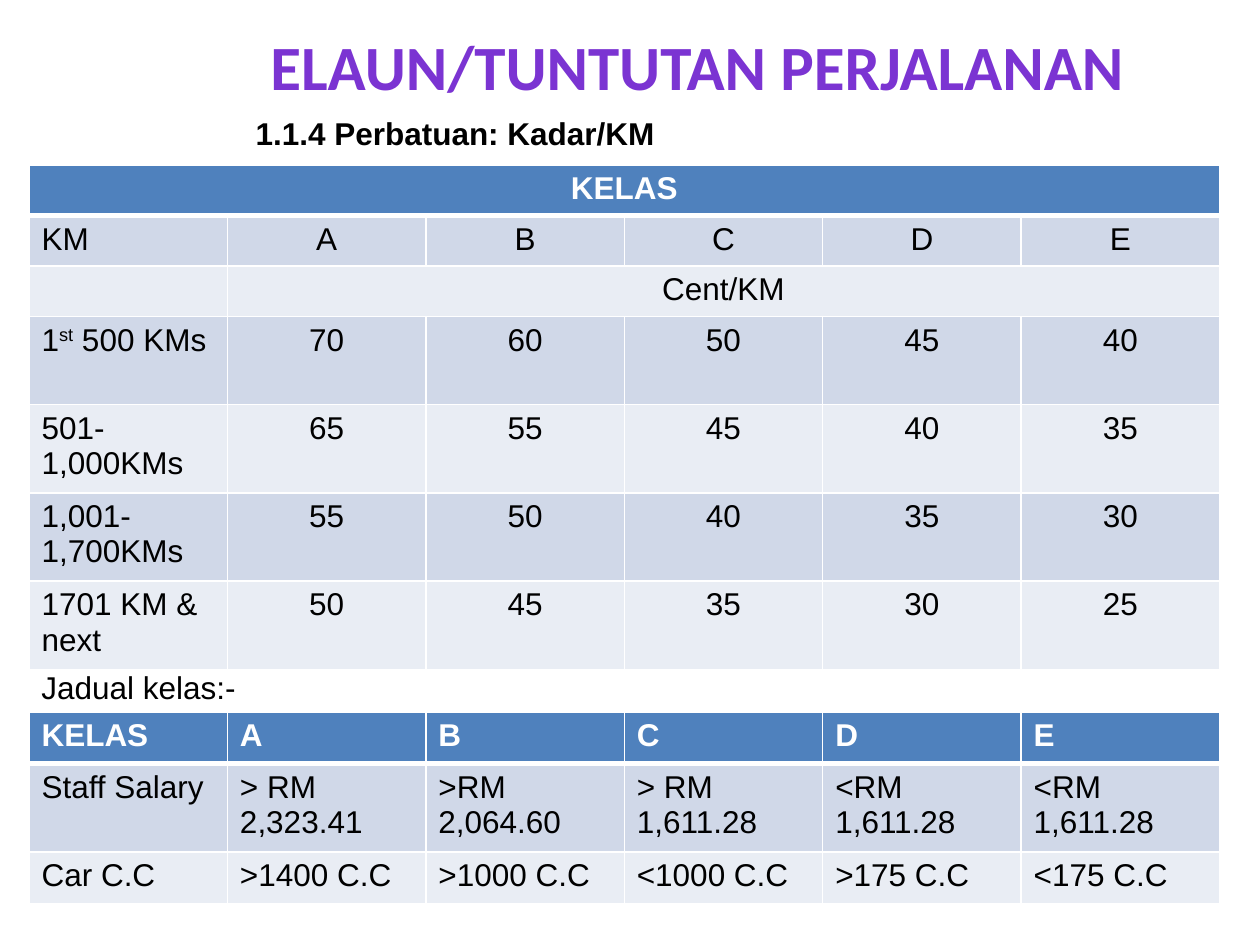
from dataclasses import dataclass

from lxml import etree
from pptx import Presentation
from pptx.dml.color import RGBColor
from pptx.enum.text import MSO_ANCHOR, MSO_AUTO_SIZE, PP_ALIGN
from pptx.oxml.ns import qn
from pptx.util import Inches, Pt

LEFT = PP_ALIGN.LEFT
CENTER = PP_ALIGN.CENTER
MIDDLE = MSO_ANCHOR.MIDDLE
TOP = MSO_ANCHOR.TOP
FIT_SHAPE = MSO_AUTO_SIZE.SHAPE_TO_FIT_TEXT


@dataclass(frozen=True)
class Theme:
    title_font: str = "Calibri"
    body_font: str = "Arial"
    title_size: int = 36
    body_size: int = 18
    title_color: str = "7B34D2"
    text_color: str = "000000"
    header_color: str = "4F81BD"
    odd_band: str = "D0D8E8"
    even_band: str = "E9EDF4"
    white: str = "FFFFFF"
    thin_line: int = 1
    thick_line: int = 3


def write_text(frame, text, *, font, size, color, bold=False, align=LEFT):
    paragraph = frame.paragraphs[0]
    paragraph.alignment = align
    for index, part in enumerate(text.split("^")):
        run = paragraph.add_run()
        run.text = part
        run.font.name = font
        run.font.size = Pt(size)
        run.font.bold = bold
        run.font.color.rgb = RGBColor.from_string(color)
        if index % 2:
            run.font._element.set("baseline", "30000")


def add_border(cell, side, width, color):
    line = etree.SubElement(cell._tc.get_or_add_tcPr(), qn(f"a:ln{side}"), w=str(Pt(width)))
    fill = etree.SubElement(line, qn("a:solidFill"))
    etree.SubElement(fill, qn("a:srgbClr"), val=color)


class SlideBuilder:
    def __init__(self, slide, theme):
        self.slide = slide
        self.theme = theme

    def title(self, text, left, top, width, height):
        shape = self.slide.shapes.title
        shape.left, shape.top = Inches(left), Inches(top)
        shape.width, shape.height = Inches(width), Inches(height)
        frame = shape.text_frame
        frame.word_wrap = False
        frame.auto_size = FIT_SHAPE
        frame.vertical_anchor = MIDDLE
        write_text(frame, text, font=self.theme.title_font, size=self.theme.title_size,
                   color=self.theme.title_color, bold=True, align=CENTER)

    def label(self, text, left, top, width, height, bold=False):
        shape = self.slide.shapes.add_textbox(
            Inches(left), Inches(top), Inches(width), Inches(height))
        frame = shape.text_frame
        frame.word_wrap = True
        frame.auto_size = FIT_SHAPE
        write_text(frame, text, font=self.theme.body_font, size=self.theme.body_size,
                   color=self.theme.text_color, bold=bold)

    def table(self, rows, left, top, width, row_heights, value_align=LEFT, merges=()):
        column_count = len(rows[0])
        table = self.slide.shapes.add_table(
            len(rows), column_count, Inches(left), Inches(top),
            Inches(width), Inches(sum(row_heights))).table
        for column in table.columns:
            column.width = Inches(width / column_count)
        for row_index, (values, height) in enumerate(zip(rows, row_heights)):
            table.rows[row_index].height = Inches(height)
            for column_index, value in enumerate(values):
                align = value_align if column_index or len(values[0]) and not any(values[1:]) else LEFT
                self.cell(table.cell(row_index, column_index), value, row_index, align)
        for row_index, first_column in merges:
            table.cell(row_index, first_column).merge(table.cell(row_index, column_count - 1))

    def cell(self, cell, text, row_index, align):
        theme = self.theme
        header = row_index == 0
        top_width = theme.thick_line if row_index == 1 else theme.thin_line
        bottom_width = theme.thick_line if header else theme.thin_line
        widths = {"L": theme.thin_line, "R": theme.thin_line, "T": top_width, "B": bottom_width}
        for side, width in widths.items():
            add_border(cell, side, width, theme.white)
        band = theme.odd_band if row_index % 2 else theme.even_band
        cell.fill.solid()
        cell.fill.fore_color.rgb = RGBColor.from_string(theme.header_color if header else band)
        cell.vertical_anchor = TOP
        if text:
            write_text(cell.text_frame, text, font=theme.body_font, size=theme.body_size,
                       color=theme.white if header else theme.text_color,
                       bold=header, align=align)


def main():
    presentation = Presentation()
    presentation.slide_width = Inches(10)
    presentation.slide_height = Inches(7.5)
    slide = presentation.slides.add_slide(presentation.slide_layouts[5])
    builder = SlideBuilder(slide, Theme())

    classes = ["A", "B", "C", "D", "E"]
    rates = [
        ["KELAS", "", "", "", "", ""],
        ["KM", *classes],
        ["", "Cent/KM", "", "", "", ""],
        ["1^st^ 500 KMs", "70", "60", "50", "45", "40"],
        ["501-1,000KMs", "65", "55", "45", "40", "35"],
        ["1,001-1,700KMs", "55", "50", "40", "35", "30"],
        ["1701 KM & next", "50", "45", "35", "30", "25"],
    ]
    class_limits = [
        ["KELAS", *classes],
        ["Staff Salary", "> RM 2,323.41", ">RM 2,064.60", "> RM 1,611.28",
         "<RM 1,611.28", "<RM 1,611.28"],
        ["Car C.C", ">1400 C.C", ">1000 C.C", "<1000 C.C", ">175 C.C", "<175 C.C"],
    ]

    builder.title("ELAUN/TUNTUTAN PERJALANAN", 2.01, 0.16, 7.05, 0.71)
    builder.label("1.1.4 Perbatuan: Kadar/KM", 1.93, 0.86, 4.69, 0.4, bold=True)
    builder.table(rates, 0.23, 1.31, 9.45, [0.4] * 3 + [0.7] * 4,
                  value_align=CENTER, merges=[(0, 0), (2, 1)])
    builder.table(class_limits, 0.23, 5.65, 9.45, [0.41, 0.7, 0.41])
    builder.label("Jadual kelas:-", 0.23, 5.25, 6.02, 0.4)
    presentation.save("out.pptx")


if __name__ == "__main__":
    main()
